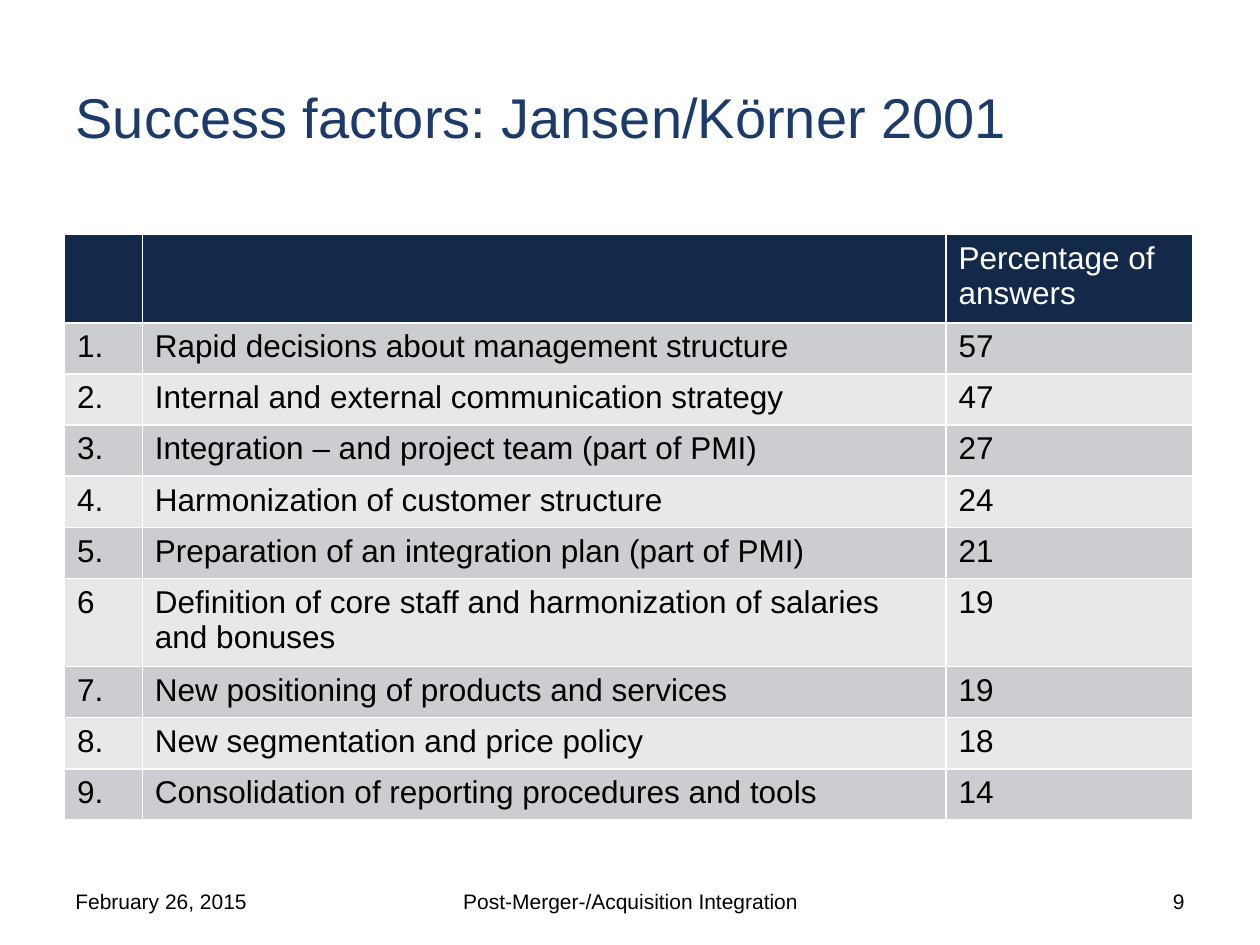
"""Build the slide on post-merger success factors."""
from typing import NamedTuple

from lxml import etree
from pptx import Presentation
from pptx.dml.color import RGBColor
from pptx.enum.text import MSO_ANCHOR, PP_ALIGN
from pptx.oxml.ns import qn
from pptx.util import Cm, Pt

LEFT, CENTER, RIGHT = PP_ALIGN.LEFT, PP_ALIGN.CENTER, PP_ALIGN.RIGHT
MIDDLE = MSO_ANCHOR.MIDDLE
FONT = "Arial"
BLACK, WHITE, TITLE_BLUE, HEADER_NAVY = "000000", "FFFFFF", "1C3B6B", "13294A"
BANDS = ("CCCDD0", "E7E8E9")
COLUMN_WIDTHS = (1.57, 16.2, 4.98)
ROW_HEIGHT, TALL_ROW_HEIGHT = 1.03, 1.67


class Factor(NamedTuple):
    number: str
    name: str
    percentage: str
    height: float = ROW_HEIGHT


class FooterItem(NamedTuple):
    text: str
    left: float
    width: float
    alignment: PP_ALIGN


HEADER = Factor("", "", "Percentage of answers", TALL_ROW_HEIGHT)
FACTORS = (
    Factor("1.", "Rapid decisions about management structure", "57"),
    Factor("2.", "Internal and external communication strategy", "47"),
    Factor("3.", "Integration – and project team (part of PMI)", "27"),
    Factor("4.", "Harmonization of customer structure", "24"),
    Factor("5.", "Preparation of an integration plan (part of PMI)", "21"),
    Factor("6", "Definition of core staff and harmonization of salaries and bonuses",
           "19", TALL_ROW_HEIGHT),
    Factor("7.", "New positioning of products and services", "19"),
    Factor("8.", "New segmentation and price policy", "18"),
    Factor("9.", "Consolidation of reporting procedures and tools", "14"),
)
FOOTER = (
    FooterItem("February 26, 2015", 1.27, 5.93, LEFT),
    FooterItem("Post-Merger-/Acquisition Integration", 8.69, 8.05, CENTER),
    FooterItem("9", 18.2, 5.93, RIGHT),
)


def rgb(value: str) -> RGBColor:
    return RGBColor.from_string(value)


def write(frame, text: str, size: float, color: str, alignment: PP_ALIGN = LEFT) -> None:
    paragraph = frame.paragraphs[0]
    paragraph.alignment = alignment
    run = paragraph.add_run()
    run.text = text
    run.font.name = FONT
    run.font.size = Pt(size)
    run.font.bold = False
    run.font.color.rgb = rgb(color)


def add_title(slide, text: str) -> None:
    title = slide.shapes.title
    title.left, title.top, title.width, title.height = Cm(1.27), Cm(0.76), Cm(22.86), Cm(3.18)
    title.text_frame.vertical_anchor = MIDDLE
    write(title.text_frame, text, 32, TITLE_BLUE)


def add_footer_item(slide, item: FooterItem) -> None:
    box = slide.shapes.add_textbox(Cm(item.left), Cm(17.65), Cm(item.width), Cm(1.02))
    box.text_frame.word_wrap = True
    box.text_frame.vertical_anchor = MIDDLE
    write(box.text_frame, item.text, 12, BLACK, item.alignment)


def add_borders(cell) -> None:
    properties = cell._tc.get_or_add_tcPr()
    for position, side in enumerate(("a:lnL", "a:lnR", "a:lnT", "a:lnB")):
        line = etree.Element(qn(side), w=str(Pt(1)))
        fill = etree.SubElement(line, qn("a:solidFill"))
        etree.SubElement(fill, qn("a:srgbClr"), val=WHITE)
        properties.insert(position, line)


def fill_row(table, index: int, factor: Factor, fill: str, color: str) -> None:
    table.rows[index].height = Cm(factor.height)
    texts = (factor.number, factor.name, factor.percentage)
    for cell, text in zip(table.rows[index].cells, texts):
        cell.fill.solid()
        cell.fill.fore_color.rgb = rgb(fill)
        add_borders(cell)
        if text:
            write(cell.text_frame, text, 18, color)


def add_factor_table(slide) -> None:
    height = sum(factor.height for factor in (HEADER, *FACTORS))
    table = slide.shapes.add_table(
        len(FACTORS) + 1, len(COLUMN_WIDTHS),
        Cm(1.3), Cm(4.73), Cm(sum(COLUMN_WIDTHS)), Cm(height),
    ).table
    for column, width in zip(table.columns, COLUMN_WIDTHS):
        column.width = Cm(width)
    fill_row(table, 0, HEADER, HEADER_NAVY, WHITE)
    for index, factor in enumerate(FACTORS, start=1):
        fill_row(table, index, factor, BANDS[(index - 1) % 2], BLACK)


def main() -> None:
    presentation = Presentation()
    presentation.slide_width, presentation.slide_height = Cm(25.4), Cm(19.05)
    slide = presentation.slides.add_slide(presentation.slide_layouts[5])
    add_title(slide, "Success factors: Jansen/Körner 2001")
    for item in FOOTER:
        add_footer_item(slide, item)
    add_factor_table(slide)
    presentation.save("out.pptx")


if __name__ == "__main__":
    main()
